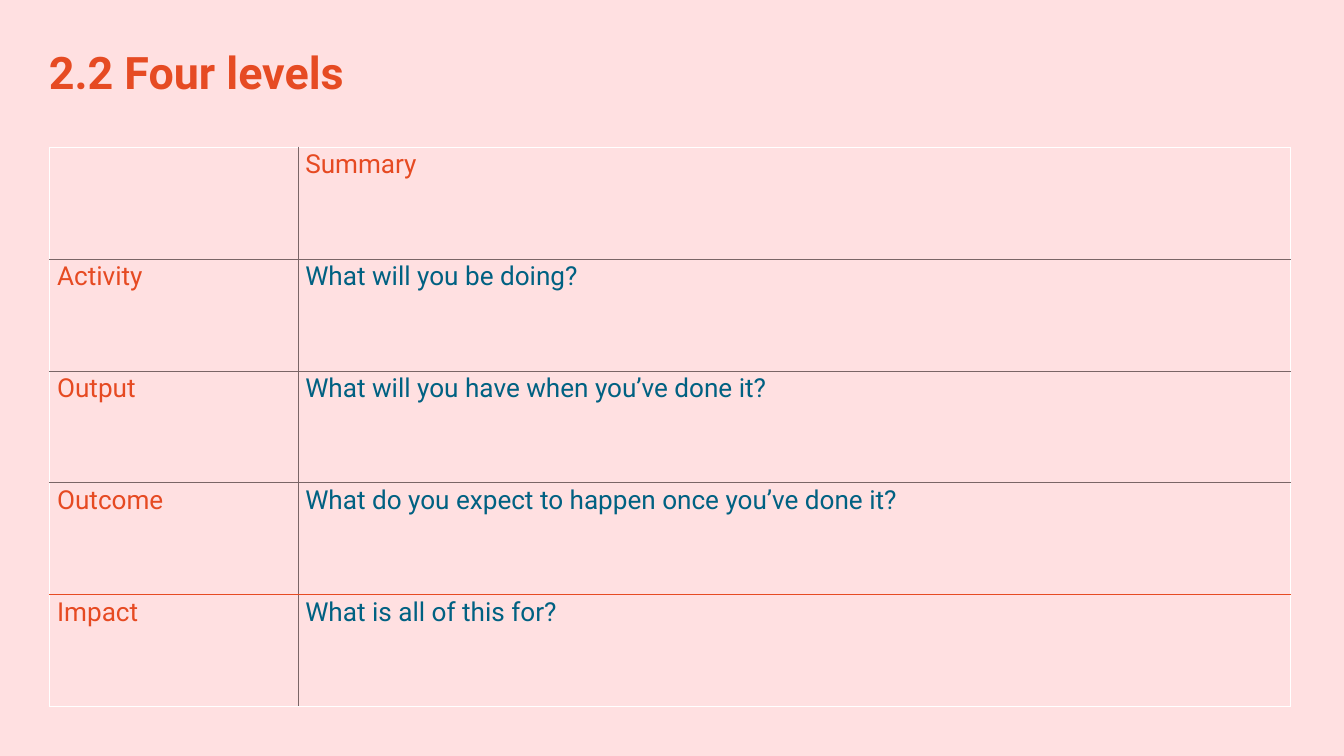
from pptx import Presentation
from pptx.dml.color import RGBColor
from pptx.enum.text import MSO_ANCHOR, MSO_AUTO_SIZE, PP_ALIGN
from pptx.oxml.ns import qn
from pptx.util import Cm, Pt
from lxml.etree import SubElement

COLORS = {
    "background": "FFE0E1",
    "title": "E64B23",
    "label": "E64A22",
    "question": "006182",
    "inner": "7A6566",
    "outer": "FFFFFF",
    "last": "E64B23",
}
FONT = "Roboto"
COLUMNS = 5
LEVELS = [
    ("", "Summary"),
    ("Activity", "What will you be doing?"),
    ("Output", "What will you have when you’ve done it?"),
    ("Outcome", "What do you expect to happen once you’ve done it?"),
    ("Impact", "What is all of this for?"),
]


def write_text(frame, text, *, size, color, bold=False, line_spacing=None, indent=None):
    paragraph = frame.paragraphs[0]
    paragraph.alignment = PP_ALIGN.LEFT
    if line_spacing:
        paragraph.line_spacing = Pt(line_spacing)
    if indent is not None:
        properties = paragraph._p.get_or_add_pPr()
        properties.set("marL", str(indent))
        properties.set("indent", "0")
    run = paragraph.add_run()
    run.text = text
    run.font.name = FONT
    run.font.size = Pt(size)
    run.font.bold = bold
    run.font.color.rgb = RGBColor.from_string(COLORS[color])


def add_title(slide, text):
    title = slide.shapes.title
    title.left, title.top, title.width, title.height = Cm(1.85), Cm(1.7), Cm(47.07), Cm(1.98)
    frame = title.text_frame
    frame.margin_left = frame.margin_right = frame.margin_top = frame.margin_bottom = 0
    frame.vertical_anchor = MSO_ANCHOR.TOP
    frame.word_wrap = True
    frame.auto_size = MSO_AUTO_SIZE.NONE
    write_text(frame, text, size=48, color="title", bold=True, line_spacing=57)


def set_borders(cell, sides):
    """Draw the cell's borders; sides maps L, R, T and B, in that order, to colour names."""
    properties = cell._tc.get_or_add_tcPr()
    for side, color in sides.items():
        line = SubElement(properties, qn(f"a:ln{side}"), w=str(Pt(0.85)))
        if color:
            fill = SubElement(line, qn("a:solidFill"))
            SubElement(fill, qn("a:srgbClr"), val=COLORS[color])
        else:
            SubElement(line, qn("a:noFill"))


def row_line(index):
    """Name the colour of the line above the row with this index."""
    if index in (0, len(LEVELS)):
        return "outer"
    return "last" if index == len(LEVELS) - 1 else "inner"


def add_levels_table(slide):
    frame = slide.shapes.add_table(
        len(LEVELS), COLUMNS, Cm(1.88), Cm(5.56), Cm(46.9), Cm(21.15))
    table = frame.table
    table.first_row = table.horz_banding = False
    for column in table.columns:
        column.width = Cm(9.38)
    for row_index, (level, summary) in enumerate(LEVELS):
        table.rows[row_index].height = Cm(4.23)
        for column_index in range(COLUMNS):
            cell = table.cell(row_index, column_index)
            set_borders(cell, {
                "L": {0: "outer", 1: "inner"}.get(column_index),
                "R": "outer" if column_index else "inner",
                "T": row_line(row_index),
                "B": row_line(row_index + 1),
            })
            cell.fill.background()
        table.cell(row_index, 1).merge(table.cell(row_index, COLUMNS - 1))
        for column_index, text in enumerate((level, summary)):
            cell = table.cell(row_index, column_index)
            cell.margin_left = cell.margin_right = Cm(0.1)
            cell.margin_top = cell.margin_bottom = Cm(0.1)
            cell.vertical_anchor = MSO_ANCHOR.TOP
            if text:
                color = "question" if row_index and column_index else "label"
                write_text(cell.text_frame, text, size=28, color=color, indent=Cm(0.18))


def main():
    deck = Presentation()
    deck.slide_width, deck.slide_height = Cm(50.8), Cm(28.58)
    slide = deck.slides.add_slide(deck.slide_layouts[5])
    background = slide.background.fill
    background.solid()
    background.fore_color.rgb = RGBColor.from_string(COLORS["background"])
    add_title(slide, "2.2 Four levels")
    add_levels_table(slide)
    deck.save("out.pptx")


if __name__ == "__main__":
    main()
